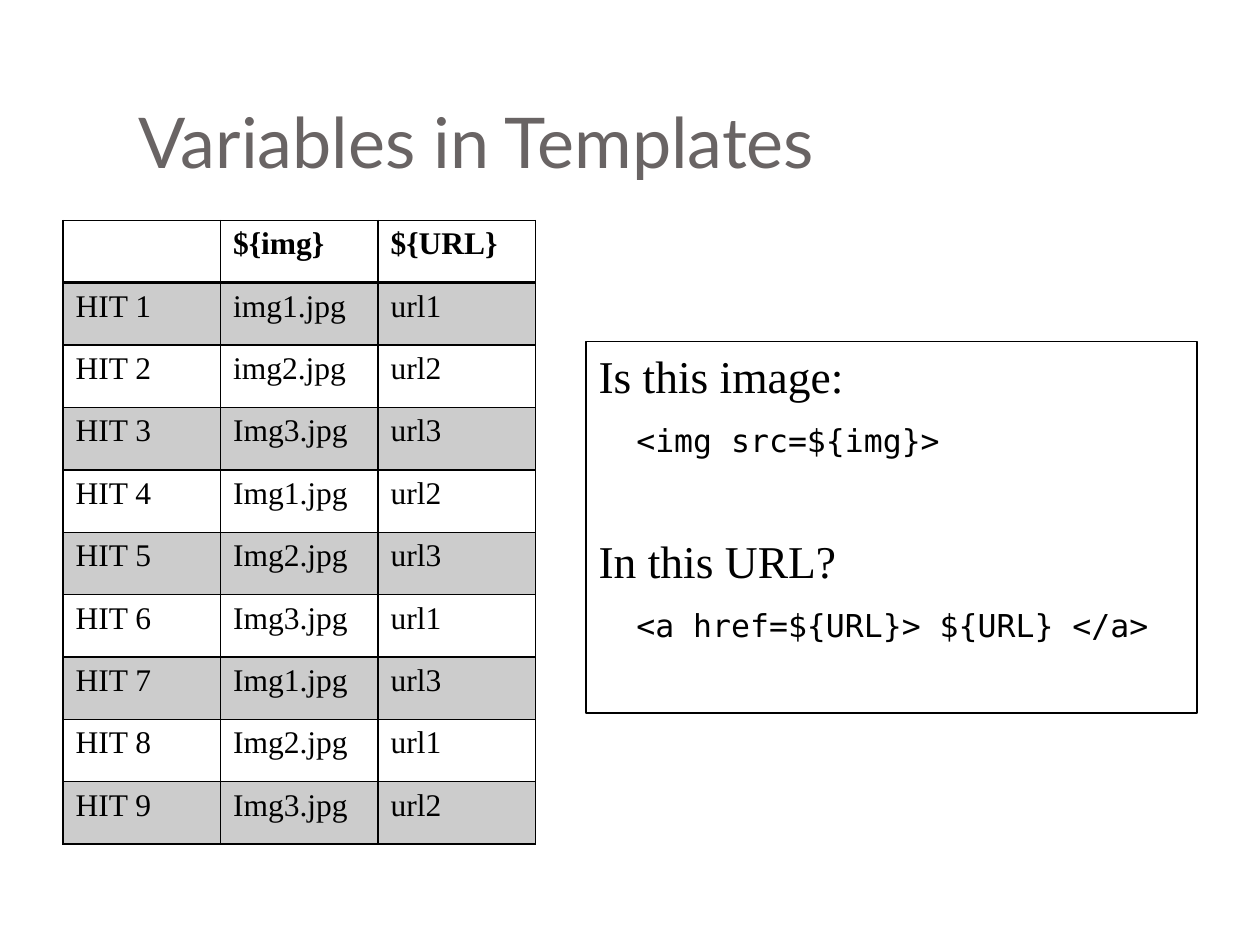
from lxml import etree
from pptx import Presentation, util as u
from pptx.dml.color import RGBColor
from pptx.enum import text
from pptx.oxml import ns

PX = 914400 // 200  # 200 px to the inch
THEME = {
    "title": {"name": "Lato", "size": u.Pt(40), "color": "696464"},
    "header": {"name": "Times New Roman", "size": u.Pt(18), "bold": True, "color": "000000"},
    "cell": {"name": "Times New Roman", "size": u.Pt(18), "bold": False, "color": "000000"},
    "question": {"name": "Times New Roman", "size": u.Pt(26), "color": "000000"},
    "code": {"name": "DejaVu Sans Mono", "size": u.Pt(18), "color": "000000"},
    "line": "000000",
    "band": "000000",
    "band_alpha": 20,
}


def write(p, words, style):
    r = p.add_run()
    r.text = words
    for key, value in THEME[style].items():
        if key == "color":
            r.font.color.rgb = RGBColor.from_string(value)
        else:
            setattr(r.font, key, value)


def border(cell, side, points):
    """Draw one solid edge; side is L, R, T or B."""
    ln = etree.SubElement(cell._tc.get_or_add_tcPr(), ns.qn(f"a:ln{side}"), w=str(u.Pt(points)))
    fill = etree.SubElement(ln, ns.qn("a:solidFill"))
    etree.SubElement(fill, ns.qn("a:srgbClr"), val=THEME["line"])


prs = Presentation()
prs.slide_width, prs.slide_height = 2000 * PX, 1500 * PX
s = prs.slides.add_slide(prs.slide_layouts[1])
title, body = s.placeholders

# Title and body frames
frames = [
    (title, (200, 60, 1700, 250), text.MSO_ANCHOR.BOTTOM, 20),
    (body, (930, 542, 970, 590), text.MSO_ANCHOR.TOP, 10),
]
for sp, box, anchor, bottom in frames:
    for name, value in zip(("left", "top", "width", "height"), box):
        setattr(sp, name, value * PX)
    tf_format = {
        "vertical_anchor": anchor, "word_wrap": True, "auto_size": text.MSO_AUTO_SIZE.NONE,
        "margin_left": 20 * PX, "margin_right": 20 * PX,
        "margin_top": 10 * PX, "margin_bottom": bottom * PX,
    }
    for name, value in tf_format.items():
        setattr(sp.text_frame, name, value)

p = title.text_frame.paragraphs[0]
p.alignment = text.PP_ALIGN.LEFT
write(p, "Variables in Templates", "title")

# Template text: questions, each with its indented markup
body.line.color.rgb = RGBColor.from_string(THEME["line"])
body.line.width = u.Pt(0.75)
template = [
    ("Is this image:", "question", 5.8),
    ("<img src=${img}>", "code", 10.5),
    ("In this URL?", "question", 42.5),
    ("<a href=${URL}> ${URL} </a>", "code", 10.5),
]
tf = body.text_frame
for i, (words, style, before) in enumerate(template):
    p = tf.add_paragraph() if i else tf.paragraphs[0]
    p.space_before = u.Pt(before)
    pPr = p._p.get_or_add_pPr()
    pPr.set("marL", str(60 * PX))
    pPr.set("indent", str(-60 * PX if style == "question" else 0))
    etree.SubElement(pPr, ns.qn("a:buNone"))
    write(p, words, style)

# Table of variable values
images = ["img1.jpg", "img2.jpg", "Img3.jpg"] + ["Img1.jpg", "Img2.jpg", "Img3.jpg"] * 2
urls = ["url1", "url2", "url3", "url2", "url3", "url1", "url3", "url1", "url2"]
rows = [("", "${img}", "${URL}")]
rows += [(f"HIT {n}", image, url) for n, (image, url) in enumerate(zip(images, urls), 1)]

table = s.shapes.add_table(len(rows), 3, 100 * PX, 350 * PX, 750 * PX, 990 * PX).table
table.horz_banding = False
for i, row in enumerate(rows):
    for j, words in enumerate(row):
        cell = table.cell(i, j)
        for side in "LRTB":
            heavy = (i, side) in ((0, "B"), (1, "T"))
            border(cell, side, 2 if heavy else 1)
        if i % 2:
            cell.fill.solid()
            cell.fill.fore_color.rgb = RGBColor.from_string(THEME["band"])
            color = cell._tc.tcPr.find(ns.qn("a:solidFill")).find(ns.qn("a:srgbClr"))
            etree.SubElement(color, ns.qn("a:alpha"), val=str(THEME["band_alpha"] * 1000))
        else:
            cell.fill.background()
        if words:
            write(cell.text_frame.paragraphs[0], words, "cell" if i else "header")

prs.save("out.pptx")
